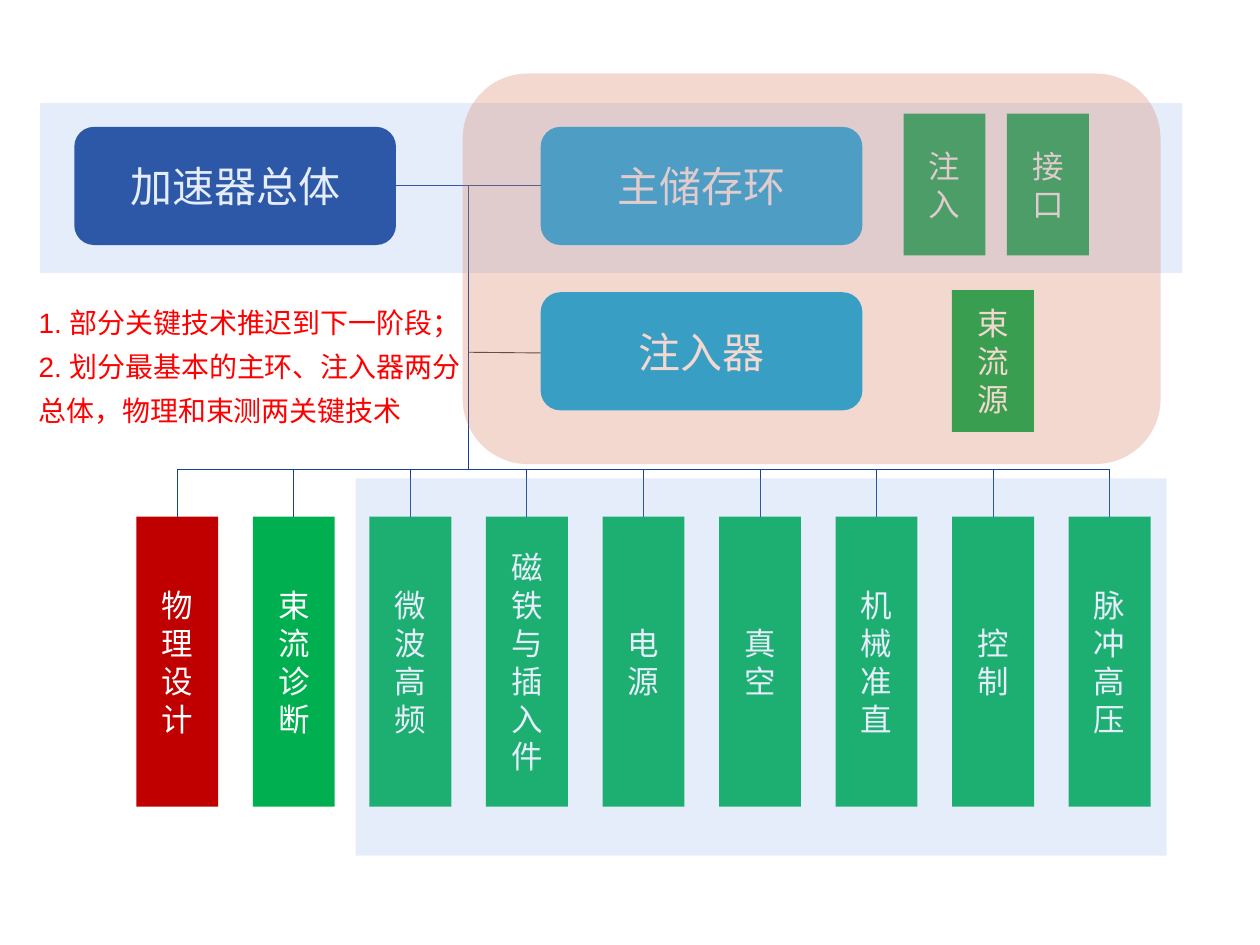
from lxml.etree import SubElement
from pptx import Presentation
from pptx.dml.color import RGBColor
from pptx.enum.shapes import MSO_CONNECTOR, MSO_SHAPE
from pptx.enum.text import MSO_ANCHOR, PP_ALIGN
from pptx.oxml.ns import qn
from pptx.util import Pt

RECT, ROUND = MSO_SHAPE.RECTANGLE, MSO_SHAPE.ROUNDED_RECTANGLE
NAVY, SKY, GREEN, RED = "154295", "00B0F0", "00B050", "C00000"

UNITS = [
    ("加速器总体", 42.5, 72.5, NAVY),
    ("主储存环", 309, 72.5, SKY),
    ("注入器", 309, 167, SKY),
]
PARTS = [("束流源", 544, 165.8), ("注入", 516.3, 65), ("接口", 575.4, 65)]
TEAMS = [
    ("物理设计", RED), ("束流诊断", GREEN), ("微波高频", GREEN),
    ("磁铁与插入件", GREEN), ("电源", GREEN), ("真空", GREEN),
    ("机械准直", GREEN), ("控制", GREEN), ("脉冲高压", GREEN),
]
ZONES = [
    (RECT, (23, 59, 652.5, 97), "88ACEE", 21),
    (RECT, (203.2, 273.4, 463.5, 215.6), "88ACEE", 21),
    (ROUND, (264.4, 42, 398.8, 223.2), "D37051", 27),
]
NOTES = [
    "1. 部分关键技术推迟到下一阶段；",
    "2. 划分最基本的主环、注入器两分总体，物理和束测两关键技术",
]
UNIT_W, UNIT_H = 183.8, 67.5
TEAM_X, TEAM_Y, PITCH, TEAM_W, TEAM_H = 77.9, 295.3, 66.6, 46.8, 165.7
PART_H = 81
BUS_Y, TRUNK_X, MAIN_Y = 268.4, 267.7, 105.8


def color(code):
    return RGBColor.from_string(code)


def style(para, size, font, code):
    for run in para.runs:
        run.font.size = Pt(size)
        run.font.name = font
        run.font.color.rgb = color(code)


def block(slide, kind, box, fill):
    shape = slide.shapes.add_shape(kind, *map(Pt, box))
    shape.shadow.inherit = False
    shape.fill.solid()
    shape.fill.fore_color.rgb = color(fill)
    shape.line.fill.background()
    return shape


def label(slide, kind, box, fill, text, size):
    frame = block(slide, kind, box, fill).text_frame
    frame.word_wrap = True
    frame.vertical_anchor = MSO_ANCHOR.MIDDLE
    frame.text = text
    para = frame.paragraphs[0]
    para.alignment = PP_ALIGN.CENTER
    style(para, size, "Calibri", "FFFFFF")


def zone(slide, kind, box, fill, alpha):
    shape = block(slide, kind, box, fill)
    tone = shape.fill._xPr.find(".//" + qn("a:srgbClr"))
    SubElement(tone, qn("a:alpha")).set("val", str(alpha * 1000))


def wire(slide, ends, code=NAVY):
    line = slide.shapes.add_connector(MSO_CONNECTOR.STRAIGHT, *map(Pt, ends))
    line.line.color.rgb = color(code)
    line.line.width = Pt(0.5)
    SubElement(line._element.spPr, qn("a:effectLst"))


def main():
    """Build the accelerator organisation slide."""
    deck = Presentation()
    deck.slide_width, deck.slide_height = Pt(720), Pt(540)
    slide = deck.slides.add_slide(deck.slide_layouts[6])

    for text, x, y, fill in UNITS:
        label(slide, ROUND, (x, y, UNIT_W, UNIT_H), fill, text, 24)
    for text, x, y in PARTS:
        label(slide, RECT, (x, y, TEAM_W, PART_H), GREEN, text, 18)

    mids = []
    for i, (text, fill) in enumerate(TEAMS):
        x = TEAM_X + i * PITCH
        label(slide, RECT, (x, TEAM_Y, TEAM_W, TEAM_H), fill, text, 18)
        mids.append(x + TEAM_W / 2)
        wire(slide, (mids[-1], TEAM_Y, mids[-1], BUS_Y))

    wire(slide, (UNITS[0][1] + UNIT_W, MAIN_Y, UNITS[1][1], MAIN_Y))
    wire(slide, (UNITS[2][1], 201.7, TRUNK_X, 201.3), "3D3F41")
    wire(slide, (mids[0], BUS_Y, mids[-1], BUS_Y))
    wire(slide, (TRUNK_X, MAIN_Y, TRUNK_X, BUS_Y))

    for item in ZONES:
        zone(slide, *item)

    frame = slide.shapes.add_textbox(*map(Pt, (15, 165.6, 258.5, 83))).text_frame
    frame.word_wrap = True
    frame.text = "\n".join(NOTES)
    for para in frame.paragraphs:
        para.line_spacing = 1.3
        style(para, 16, "Arial", "FF0000")

    deck.save("out.pptx")


if __name__ == "__main__":
    main()
